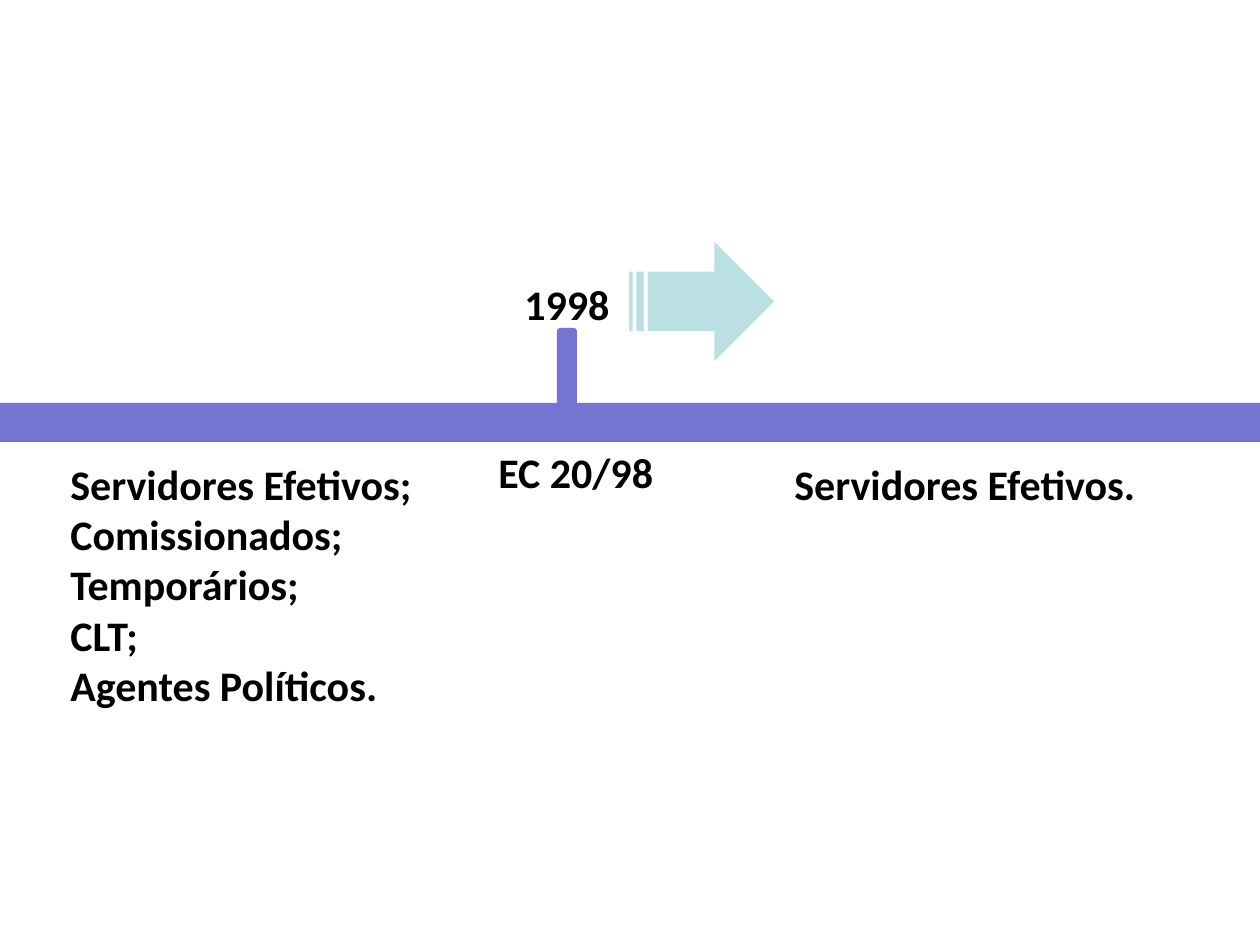
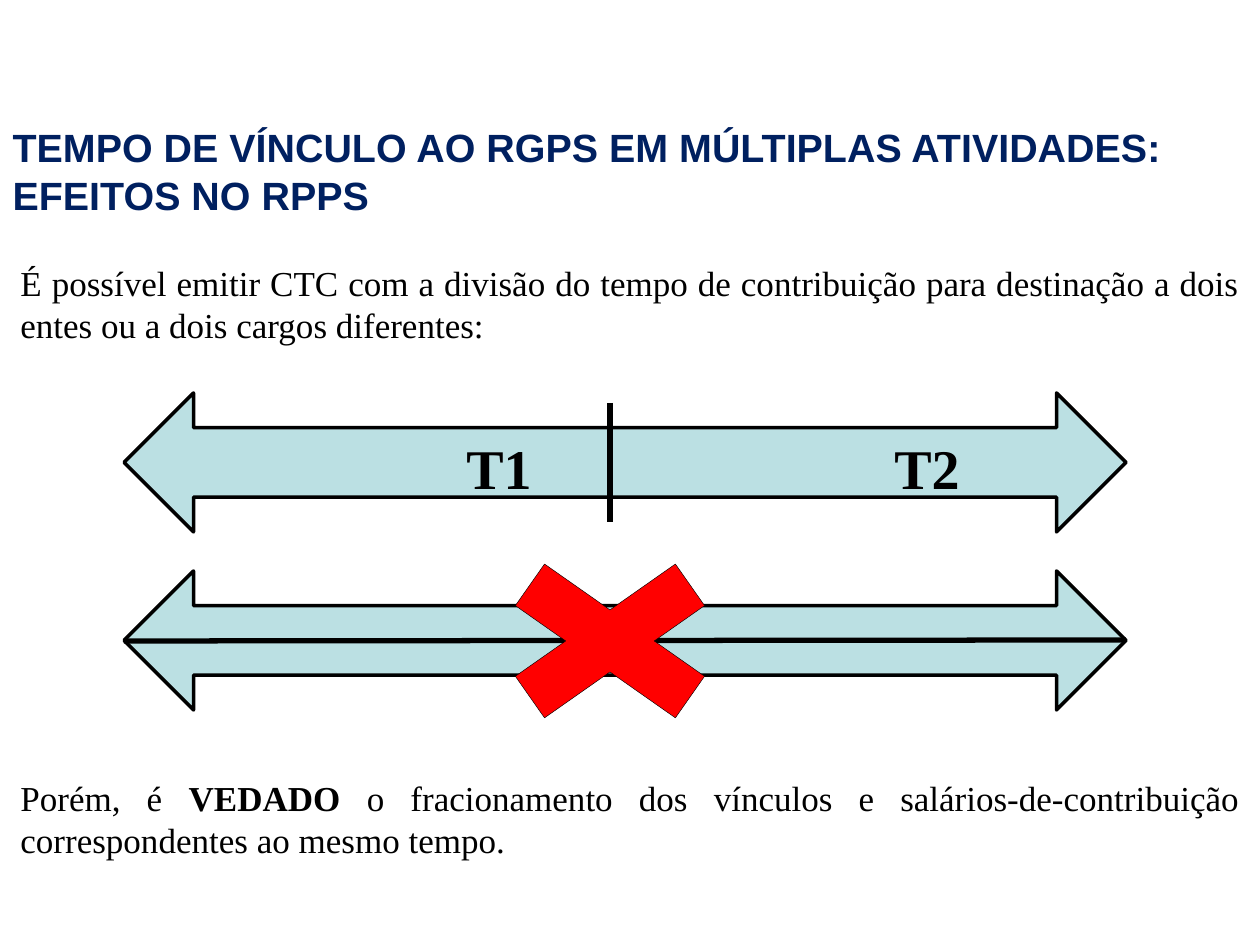
"""Build two slides on pension service time: a timeline and split arrows."""
from pptx import Presentation
from pptx.dml.color import RGBColor
from pptx.enum.shapes import MSO_CONNECTOR as Link, MSO_SHAPE as Kind
from pptx.enum.text import MSO_ANCHOR as Anchor, MSO_AUTO_SIZE as Fit, PP_ALIGN as Align
from pptx.util import Emu, Inches, Pt
from lxml.etree import SubElement
from pptx.oxml.ns import qn

BLACK = RGBColor(0x00, 0x00, 0x00)
NAVY = RGBColor(0x00, 0x20, 0x60)
VIOLET = RGBColor(0x75, 0x75, 0xD1)
AQUA = RGBColor(0xBB, 0xE0, 0xE3)
RED = RGBColor(0xFF, 0x00, 0x00)

LABEL = dict(name="Calibri", size=Pt(24), bold=True)
HEAD = dict(name="Arial", size=Pt(22.5), bold=True)
BODY = dict(name="Times New Roman", size=Pt(20), bold=False)
PART = dict(name="Times New Roman", size=Pt(32), bold=True)
SCALE = 914400 / 126


def px(*nums):
    return [Emu(round(n * SCALE)) for n in nums]


class Deck:
    """Hold the style and the current slide."""

    def __init__(self):
        self.prs = Presentation()
        self.prs.slide_width, self.prs.slide_height = Inches(10), Inches(7.5)
        self.slide = None

    def page(self, layout):
        self.slide = self.prs.slides.add_slide(self.prs.slide_layouts[layout])

    def fill_text(self, frame, paras, font, color=BLACK, **form):
        for i, runs in enumerate(paras):
            para = frame.paragraphs[0] if i == 0 else frame.add_paragraph()
            for key, val in form.items():
                setattr(para, key, val)
            for words, more in runs:
                run = para.add_run()
                run.text = words
                for key, val in {**font, **more}.items():
                    setattr(run.font, key, val)
                run.font.color.rgb = color

    def title(self, box, words):
        head = self.slide.shapes.title
        head.left, head.top, head.width, head.height = px(*box)
        frame = head.text_frame
        for key, val in dict(auto_size=Fit.NONE, word_wrap=True,
                             vertical_anchor=Anchor.TOP).items():
            setattr(frame, key, val)
        self.fill_text(frame, [[(words, {})]], HEAD, NAVY,
                       alignment=Align.LEFT, line_spacing=Pt(27.5))

    def text(self, box, paras, font, wrap=False, **form):
        frame = self.slide.shapes.add_textbox(*px(*box)).text_frame
        frame.word_wrap = wrap
        self.fill_text(frame, paras, font, **form)

    def label(self, box, *lines):
        self.text(box, [[(line, {})] for line in lines], LABEL)

    def shape(self, kind, box, color, edge=None):
        item = self.slide.shapes.add_shape(kind, *px(*box))
        item.shadow.inherit = False
        item.fill.solid()
        item.fill.fore_color.rgb = color
        if edge:
            item.line.color.rgb = BLACK
            item.line.width = Pt(edge)
        else:
            item.line.fill.background()

    def line(self, ends):
        item = self.slide.shapes.add_connector(Link.STRAIGHT, *px(*ends))
        item.line.color.rgb = BLACK
        item.line.width = Pt(3)
        SubElement(item._element.spPr, qn("a:effectLst"))


def draw_time(deck):
    deck.page(6)
    deck.shape(Kind.RECTANGLE, (0, 403, 1260, 39), VIOLET)
    deck.shape(Kind.ROUNDED_RECTANGLE, (557, 328, 20, 109), VIOLET)
    deck.label((512, 272, 111, 63), "1998")
    deck.label((486, 440, 181, 63), "EC 20/98")
    deck.shape(Kind.STRIPED_RIGHT_ARROW, (629, 242, 145, 119), AQUA)
    deck.label((58, 452, 370, 267), "Servidores Efetivos;", "Comissionados;",
               "Temporários;", "CLT;", "Agentes Políticos.")
    deck.label((782, 452, 370, 63), "Servidores Efetivos.")


def draw_split(deck):
    deck.page(5)
    deck.title((0, 116, 1260, 110),
               "TEMPO DE VÍNCULO AO RGPS EM MÚLTIPLAS ATIVIDADES: EFEITOS NO RPPS")
    rule = [("É possível emitir CTC com a divisão do tempo de contribuição para "
             "destinação a dois entes ou a dois cargos diferentes:", {})]
    ban = [("Porém, é ", {}), ("VEDADO ", dict(bold=True)),
           ("o fracionamento dos vínculos e salários-de-contribuição "
            "correspondentes ao mesmo tempo.", {})]
    for top, runs in ((255, rule), (770, ban)):
        deck.text((8, top, 1244, 97), [runs], BODY, wrap=True,
                  alignment=Align.JUSTIFY, line_spacing=Pt(24))
    for top in (393, 571):
        deck.shape(Kind.LEFT_RIGHT_ARROW, (124, top, 1002, 139), AQUA, 2)
    for mid, words in ((499, "T1"), (927, "T2")):
        deck.text((mid - 60, 427, 120, 77), [[(words, {})]], PART,
                  wrap=True, alignment=Align.CENTER)
    deck.line((610, 403, 610, 522))
    deck.line((124, 641, 1126, 640))
    deck.shape(Kind.MATH_MULTIPLY, (456, 533, 308, 216), RED, 0.25)


def main():
    deck = Deck()
    draw_time(deck)
    draw_split(deck)
    deck.prs.save("out.pptx")


if __name__ == "__main__":
    main()
